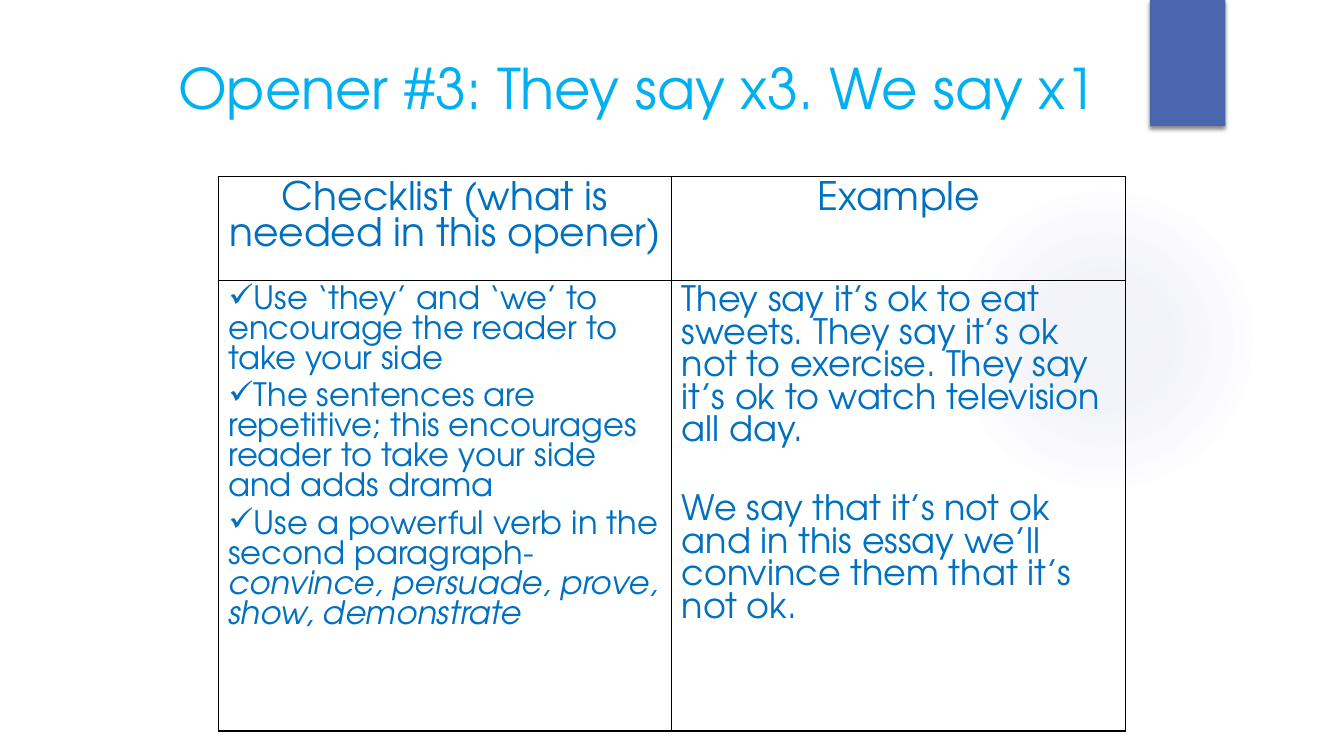
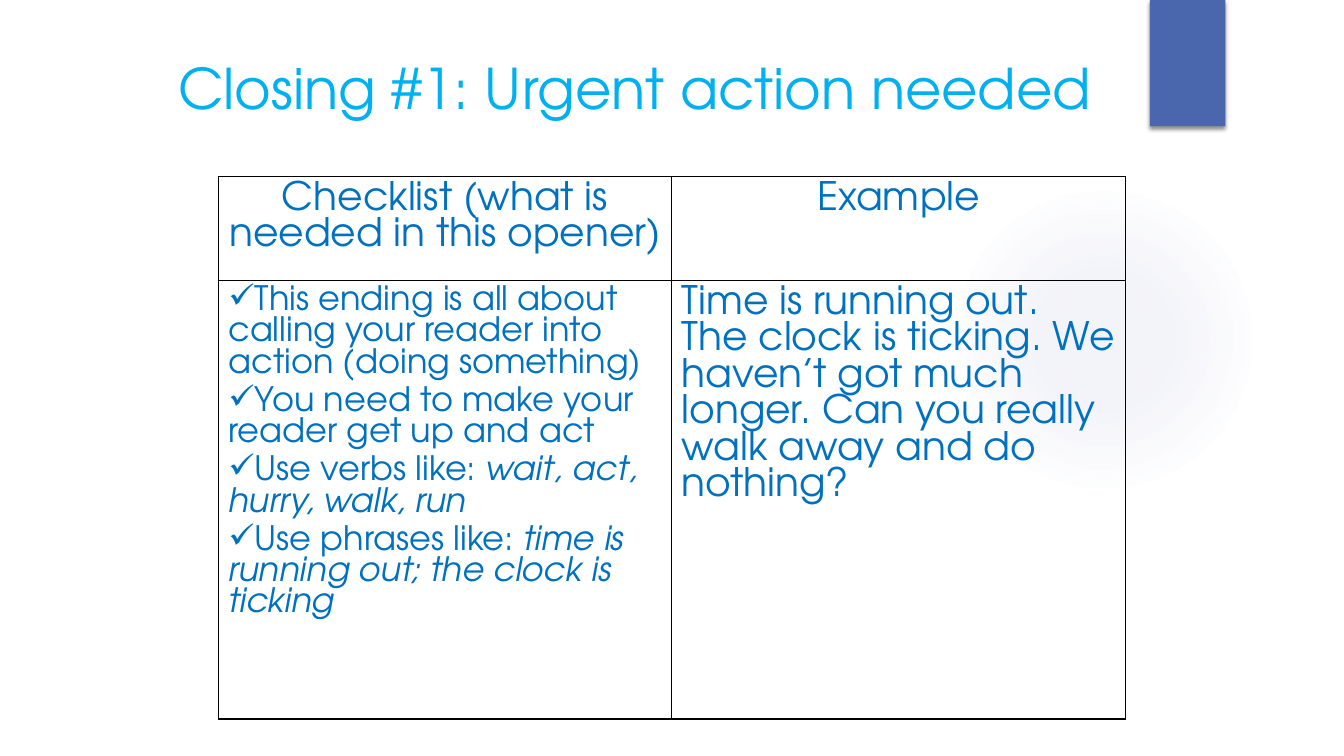
from dataclasses import dataclass

from pptx import Presentation
from pptx.dml.color import RGBColor
from pptx.enum.shapes import MSO_SHAPE
from pptx.enum.text import MSO_ANCHOR, MSO_AUTO_SIZE, PP_ALIGN
from pptx.oxml import parse_xml
from pptx.oxml.ns import nsdecls, qn
from pptx.util import Cm, Pt


@dataclass(frozen=True)
class Theme:
    """Colours, font and type sizes of the deck."""
    font: str = "TeX Gyre Adventor"
    title: str = "00B0F0"
    body: str = "0070C0"
    bar: str = "4A66AC"
    glow: str = "5C64B7"
    border: str = "000000"
    title_size: int = 40
    head_size: int = 28
    gap: int = 5


T = Theme()
HEADS = ("Checklist (what is needed in this opener)", "Example")
SLIDES = [
    dict(
        title="Opener #3: They say x3. We say x1",
        body_height=11.35,
        check_size=23,
        checks=[
            ("Use ‘they’ and ‘we’ to encourage the reader to take your side", ""),
            ("The sentences are repetitive; this encourages reader to take "
             "your side and adds drama", ""),
            ("Use a powerful verb in the second paragraph- ",
             "convince, persuade, prove, show, demonstrate"),
        ],
        example_size=25,
        examples=[
            "They say it’s ok to eat sweets. They say it’s ok not to exercise. "
            "They say it’s ok to watch television all day.",
            "We say that it’s not ok and in this essay we’ll convince them "
            "that it’s not ok.",
        ],
    ),
    dict(
        title="Closing #1: Urgent action needed",
        body_height=11.05,
        check_size=24,
        checks=[
            ("This ending is all about calling your reader into action "
             "(doing something)", ""),
            ("You need to make your reader get up and act", ""),
            ("Use verbs like: ", "wait, act, hurry, walk, run"),
            ("Use phrases like: ", "time is running out; the clock is ticking"),
        ],
        example_size=28,
        examples=[
            "Time is running out. The clock is ticking. We haven’t got much "
            "longer. Can you really walk away and do nothing?",
        ],
    ),
]


def add_text(tf, text, size, color=T.body, italic_text="", align=PP_ALIGN.LEFT,
             before=0, bullet=None):
    """Write one paragraph, with an optional italic ending and bullet."""
    p = tf.paragraphs[0]
    if p.runs:
        p = tf.add_paragraph()
    p.alignment = align
    p.space_before = Pt(before)
    if bullet:
        pPr = p._p.get_or_add_pPr()
        pPr.set("marL", "0")
        pPr.set("indent", "0")
        pPr.append(parse_xml(f'<a:buChar {nsdecls("a")} char="{bullet}"/>'))
    for part, italic in ((text, False), (italic_text, True)):
        if part:
            r = p.add_run()
            r.text = part
            r.font.name = T.font
            r.font.size = Pt(size)
            r.font.italic = italic
            r.font.color.rgb = RGBColor.from_string(color)


def add_plain(s, kind, color, left, top, width, height):
    """Add a filled shape without line or shadow."""
    sp = s.shapes.add_shape(kind, Cm(left), Cm(top), Cm(width), Cm(height))
    sp.shadow.inherit = False
    sp.line.fill.background()
    sp.fill.solid()
    sp.fill.fore_color.rgb = RGBColor.from_string(color)
    return sp


def add_decor(s, layout):
    """Draw the glow and the top bar and move them to the shared layout."""
    glow = add_plain(s, MSO_SHAPE.OVAL, T.glow, 23.9, 4.65, 7.82, 7.82)
    stops = "".join(
        f'<a:gs pos="{pos}000"><a:srgbClr val="{T.glow}">'
        f'<a:alpha val="{alpha}000"/></a:srgbClr></a:gs>'
        for pos, alpha in ((0, 7), (36, 6), (69, 0)))
    spPr = glow.element.spPr
    spPr.replace(spPr.find(qn("a:solidFill")), parse_xml(
        f'<a:gradFill {nsdecls("a")}><a:gsLst>{stops}</a:gsLst>'
        '<a:path path="circle"><a:fillToRect l="50000" t="50000" r="50000" '
        'b="50000"/></a:path></a:gradFill>'))
    bar = add_plain(s, MSO_SHAPE.RECTANGLE, T.bar, 28.98, 0, 1.9, 3.18)
    bar.element.spPr.find(qn("a:effectLst")).append(parse_xml(
        f'<a:outerShdw {nsdecls("a")} blurRad="{Pt(3)}" dist="{Pt(2)}" '
        'dir="5400000" rotWithShape="0"><a:srgbClr val="000000">'
        '<a:alpha val="45000"/></a:srgbClr></a:outerShdw>'))
    for sp in (glow, bar):
        layout.shapes.element.append(sp.element)


def add_title(s, text, left, top, width, height):
    """Place and format the title placeholder."""
    sp = s.shapes.title
    sp.left, sp.top, sp.width, sp.height = map(Cm, (left, top, width, height))
    tf = sp.text_frame
    tf.auto_size = MSO_AUTO_SIZE.NONE
    tf.word_wrap = True
    tf.vertical_anchor = MSO_ANCHOR.TOP
    tf.margin_top = Cm(0.58)
    add_text(tf, text, T.title_size, T.title)


def style_cell(cell):
    """Clear the fill of a cell and draw its four borders."""
    tcPr = cell._tc.get_or_add_tcPr()
    for side in ("lnL", "lnR", "lnT", "lnB"):
        tcPr.append(parse_xml(
            f'<a:{side} {nsdecls("a")} w="{Pt(1)}"><a:solidFill>'
            f'<a:srgbClr val="{T.border}"/></a:solidFill></a:{side}>'))
    cell.fill.background()


def add_checklist(s, spec_data, left, top, width, head_height):
    """Add the table that sets a checklist beside its example."""
    body_height = spec_data["body_height"]
    tbl = s.shapes.add_table(2, 2, Cm(left), Cm(top), Cm(width),
                             Cm(head_height + body_height)).table
    tbl.first_row = tbl.horz_banding = False
    for row, height in zip(tbl.rows, (head_height, body_height)):
        row.height = Cm(height)
    for cell in tbl.iter_cells():
        style_cell(cell)
    for col, head in enumerate(HEADS):
        add_text(tbl.cell(0, col).text_frame, head, T.head_size,
                 align=PP_ALIGN.CENTER)
    checks, examples = (tbl.cell(1, col).text_frame for col in range(2))
    for i, (text, ending) in enumerate(spec_data["checks"]):
        add_text(checks, text, spec_data["check_size"], italic_text=ending,
                 before=T.gap if i else 0, bullet="✓")
    for i, text in enumerate(spec_data["examples"]):
        add_text(examples, text, spec_data["example_size"],
                 before=33 if i else 0)


def main():
    """Build and save the deck."""
    prs = Presentation()
    prs.slide_width, prs.slide_height = Cm(33.87), Cm(19.05)
    layout = prs.slide_layouts[5]
    for i, data in enumerate(SLIDES):
        s = prs.slides.add_slide(layout)
        if i == 0:
            add_decor(s, layout)
        add_title(s, data["title"], 4.24, 0.76, 25.4, 3.18)
        add_checklist(s, data, 5.5, 4.45, 22.86, 2.62)
    prs.save("out.pptx")


if __name__ == "__main__":
    main()
